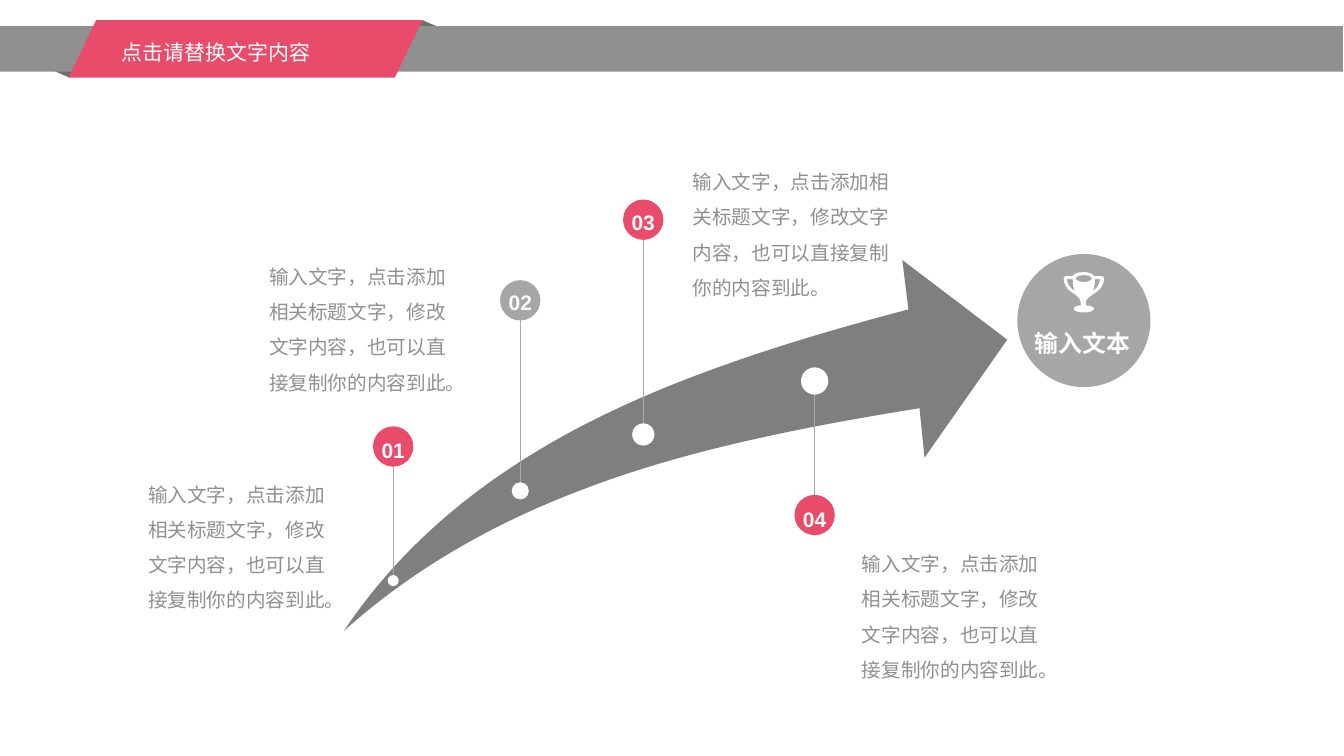
"""Build a rising-arrow roadmap slide with four numbered steps and a goal."""
from dataclasses import dataclass

from lxml.etree import SubElement
from pptx import Presentation
from pptx.dml.color import RGBColor
from pptx.enum.shapes import MSO_CONNECTOR as CONN, MSO_SHAPE as SHAPE
from pptx.enum.text import MSO_ANCHOR as ANCHOR, MSO_AUTO_SIZE as FIT, PP_ALIGN as ALIGN
from pptx.oxml.ns import qn
from pptx.util import Inches, Pt


@dataclass(frozen=True)
class Theme:
    """Colours, fonts and type sizes."""
    accent: str = "E84C6A"
    gray: str = "A6A6A6"
    arrow: str = "7F7F7F"
    band: str = "909090"
    fold: str = "6F6F6F"
    stem: str = "A6AAA9"
    white: str = "FFFFFF"
    number: str = "FCFCFC"
    latin: str = "Arial"
    cjk: str = "Noto Sans CJK SC"
    title_size: int = 15
    body_size: int = 14
    goal_size: int = 17


T = Theme()
TITLE = "点击请替换文字内容"
GOAL = "输入文本"
BODY = "输入文字，点击添加相关标题文字，修改文字内容，也可以直接复制你的内容到此。"
BADGE, NUMBER_W, NUMBER_H, BODY_H = 0.4, 0.24, 0.29, 1.51

# fmt: off
STEPS = [
    dict(no="01", x=3.9, badge_y=4.43, no_top=4.3, stem=(5.75, 4.43), dot_y=5.76, dot=0.11,
         color=T.accent, text=(1.37, 4.62, 2.14)),
    dict(no="02", x=5.16, badge_y=2.98, no_top=2.83, stem=(4.87, 3), dot_y=4.87, dot=0.17,
         color=T.gray, text=(2.57, 2.46, 2.14)),
    dict(no="03", x=6.38, badge_y=2.18, no_top=2.03, stem=(4.3, 2.36), dot_y=4.31, dot=0.22,
         color=T.accent, text=(6.77, 1.52, 2.18)),
    dict(no="04", x=8.08, badge_y=5.11, no_top=4.98, stem=(5.07, 3.78), dot_y=3.78, dot=0.27,
         color=T.accent, text=(8.45, 5.31, 2.14)),
]
ARROW = [
    [(3.41, 6.26), (3.94, 5.47, 4.65, 4.85, 5.56, 4.34), (6.49, 3.82, 7.64, 3.43, 9.01, 3.07),
     (8.95, 2.58), (9.99, 3.37), (9.17, 4.54), (9.12, 4.05),
     (7.87, 4.25, 6.78, 4.48, 5.85, 4.83), (4.9, 5.18, 4.09, 5.65, 3.41, 6.26)],
]
TROPHY = [
    [(10.58, 2.77), (10.64, 2.77), (10.64, 2.83, 10.65, 2.86, 10.66, 2.89),
     (10.62, 2.86, 10.59, 2.83, 10.58, 2.77)],
    [(10.75, 2.73), (10.81, 2.73, 10.83, 2.75, 10.83, 2.76), (10.83, 2.77, 10.81, 2.8, 10.75, 2.8),
     (10.69, 2.8, 10.67, 2.77, 10.67, 2.76), (10.67, 2.75, 10.69, 2.73, 10.75, 2.73)],
    [(10.84, 2.89), (10.85, 2.86, 10.86, 2.83, 10.86, 2.77), (10.91, 2.77),
     (10.91, 2.83, 10.87, 2.86, 10.84, 2.89)],
    [(10.77, 3), (10.77, 2.97, 10.8, 2.95, 10.84, 2.92), (10.89, 2.89, 10.95, 2.85, 10.95, 2.76),
     (10.95, 2.75, 10.94, 2.74, 10.93, 2.74), (10.85, 2.74), (10.84, 2.72, 10.81, 2.7, 10.75, 2.7),
     (10.68, 2.7, 10.65, 2.72, 10.64, 2.74), (10.57, 2.74), (10.56, 2.74, 10.55, 2.75, 10.55, 2.76),
     (10.55, 2.85, 10.61, 2.89, 10.66, 2.92), (10.7, 2.95, 10.72, 2.97, 10.72, 3), (10.72, 3.03),
     (10.68, 3.03, 10.65, 3.05, 10.65, 3.06), (10.65, 3.09, 10.7, 3.1, 10.75, 3.1),
     (10.8, 3.1, 10.85, 3.09, 10.85, 3.06), (10.85, 3.05, 10.82, 3.03, 10.77, 3.03)],
]
# fmt: on
RIBBON = [
    (SHAPE.ISOSCELES_TRIANGLE, (3.59, 0.2, 1.2, 0.26), T.fold, 0),
    (SHAPE.ISOSCELES_TRIANGLE, (0.09, 0.51, 1.2, 0.26), T.fold, 180),
    (SHAPE.RECTANGLE, (-0.01, 0.26, 13.33, 0.45), T.band, 0),
    (SHAPE.PARALLELOGRAM, (0.68, 0.2, 3.51, 0.57), T.accent, 0),
]
CENTERED = dict(alignment=ALIGN.CENTER, space_before=Pt(10))
GROWING = dict(word_wrap=True, auto_size=FIT.SHAPE_TO_FIT_TEXT)
TIGHT = dict(word_wrap=True, vertical_anchor=ANCHOR.MIDDLE,
             margin_left=0, margin_top=0, margin_right=0, margin_bottom=0)


def paint(sp, color):
    """Give a shape a flat fill without line or shadow."""
    sp.shadow.inherit = False
    sp.fill.solid()
    sp.fill.fore_color.rgb = RGBColor.from_string(color)
    sp.line.fill.background()
    return sp


def add_shape(s, kind, box, color):
    """Add a flat preset shape."""
    return paint(s.shapes.add_shape(kind, *map(Inches, box)), color)


def add_circle(s, x, y, size, color):
    """Add a circle around a centre point."""
    add_shape(s, SHAPE.OVAL, (x - size / 2, y - size / 2, size, size), color)


def add_text(s, box, text, color, size, frame, para, font=T.latin, bold=False):
    """Add a text box holding one formatted paragraph."""
    tf = s.shapes.add_textbox(*map(Inches, box)).text_frame
    p = tf.paragraphs[0]
    r = p.add_run()
    r.text = text
    look = dict(name=font, size=Pt(size), bold=bold)
    for target, values in ((tf, frame), (p, para), (r.font, look)):
        for name, value in values.items():
            setattr(target, name, value)
    r.font.color.rgb = RGBColor.from_string(color)
    SubElement(r.font._element, qn("a:ea"), typeface=T.cjk)


def points_of(seg):
    """Split a flat segment into its points in EMU."""
    return [(Inches(x), Inches(y)) for x, y in zip(seg[::2], seg[1::2])]


def add_outline(s, contours, color):
    """Add a filled freeform, joining each curve's three points into a cubic."""
    fb = s.shapes.build_freeform(*points_of(contours[0][0])[0], scale=1.0)
    for i, (start, *segs) in enumerate(contours):
        if i:
            fb.move_to(*points_of(start)[0])
        fb.add_line_segments([pt for seg in segs for pt in points_of(seg)], close=True)
    sp = paint(fb.convert_to_shape(), color)
    lines = sp._element.iter(qn("a:lnTo"))
    lines = iter(list(lines))
    for seg in (seg for contour in contours for seg in contour[1:]):
        group = [next(lines) for _ in range(len(seg) // 2)]
        if len(group) == 3:
            cubic = SubElement(group[0].getparent(), qn("a:cubicBezTo"))
            group[0].addprevious(cubic)
            for line in group:
                cubic.append(line[0])
                line.getparent().remove(line)


def add_step(s, step):
    """Add a stem, its dot and numbered badge, and the step's text."""
    x, (start, end) = step["x"], step["stem"]
    stem = s.shapes.add_connector(CONN.STRAIGHT, *map(Inches, (x, start, x, end)))
    stem.line.color.rgb = RGBColor.from_string(T.stem)
    stem.line.width = Pt(1)
    SubElement(stem._element.spPr, qn("a:effectLst"))
    add_circle(s, x, step["badge_y"], BADGE, step["color"])
    add_circle(s, x, step["dot_y"], step["dot"], T.white)
    add_text(s, (*step["text"], BODY_H), BODY, T.band, T.body_size,
             GROWING, dict(line_spacing=1.5), font=T.cjk)
    add_text(s, (x - NUMBER_W / 2, step["no_top"], NUMBER_W, NUMBER_H), step["no"], T.number,
             T.title_size, TIGHT, dict(CENTERED, line_spacing=1.2), bold=True)


def main():
    """Assemble and save the slide."""
    prs = Presentation()
    prs.slide_width, prs.slide_height = Inches(13.33), Inches(7.5)
    s = prs.slides.add_slide(prs.slide_layouts[6])

    add_outline(s, ARROW, T.arrow)
    for step in STEPS:
        add_step(s, step)

    add_circle(s, 10.75, 3.18, 1.32, T.gray)
    add_outline(s, TROPHY, T.white)
    add_text(s, (10.25, 3.16, 0.97, 0.39), GOAL, T.white, T.goal_size,
             TIGHT, dict(CENTERED, line_spacing=1.3), bold=True)

    for kind, box, color, turn in RIBBON:
        sp = add_shape(s, kind, box, color)
        sp.rotation = turn
        if kind == SHAPE.PARALLELOGRAM:
            sp.adjustments[0] = 0.48
    add_text(s, (1.11, 0.22, 2.63, 0.48), TITLE, T.white, T.title_size,
             GROWING, dict(line_spacing=1.5))
    prs.save("out.pptx")


if __name__ == "__main__":
    main()
